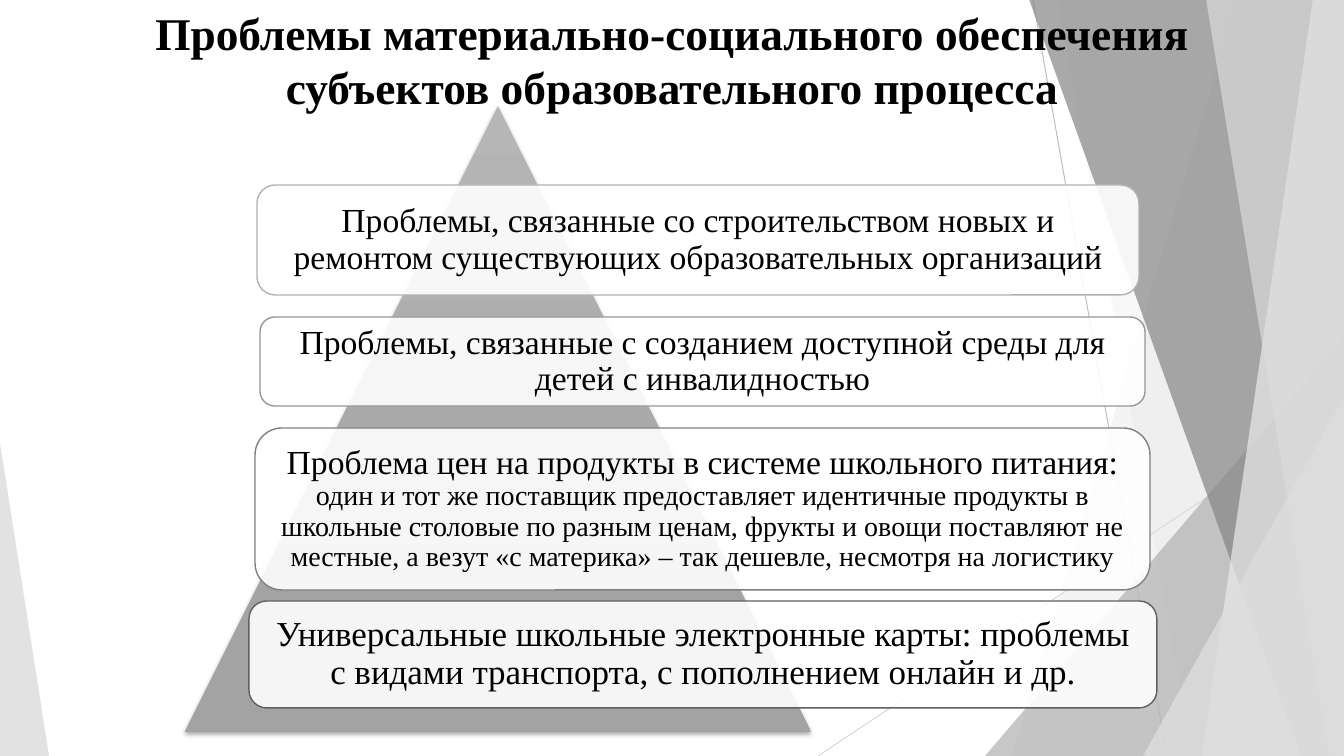
from dataclasses import dataclass

from lxml import etree
from pptx import Presentation
from pptx import util as u
from pptx.dml.color import RGBColor
from pptx.enum import shapes, text
from pptx.oxml.ns import qn

PX = 914400 / 100.8
W, H = 1344, 756


@dataclass(frozen=True)
class Theme:
    font: str = "Times New Roman"
    ink: str = "000000"
    card: str = "FFFFFF"
    pale: str = "DDDDDD"
    light: str = "EBEBEB"
    mid: str = "B2B2B2"
    dark: str = "858585"
    pyramid: tuple = ("B6B6B6", "A3A3A3")
    title: float = 32.4
    body: int = 24
    detail: int = 20
    large: int = 25


T = Theme()

# left, top, width, height, outline, runs of (text, size)
CARDS = [
    (257, 185, 882, 110, "B2B2B2",
     [("Проблемы, связанные со строительством новых и ремонтом существующих "
       "образовательных организаций", T.body)]),
    (260, 317, 885, 89, "969696",
     [("Проблемы, связанные с созданием доступной среды для детей с инвалидностью", T.body)]),
    (255, 428, 895, 162, "808080",
     [("Проблема цен на продукты в системе школьного питания: ", T.body),
      ("один и тот же поставщик предоставляет идентичные продукты в школьные столовые "
       "по разным ценам, фрукты и овощи поставляют не местные, а везут «с материка» – "
       "так дешевле, несмотря на логистику", T.detail)]),
    (249, 601, 908, 107, "5F5F5F",
     [("Универсальные школьные электронные карты: проблемы с видами транспорта, "
       "с пополнением онлайн и др.", T.large)]),
]


def px(*values):
    return [u.Emu(round(v * PX)) for v in values]


def rgb(color):
    return RGBColor.from_string(color)


def paint(sp, color, alpha):
    """Fill without outline or shadow; alpha is the opacity in percent."""
    sp.shadow.inherit = False
    sp.line.fill.background()
    sp.fill.solid()
    sp.fill.fore_color.rgb = rgb(color)
    clr = sp._element.spPr.find(qn("a:solidFill"))[0]
    etree.SubElement(clr, qn("a:alpha"), val=str(alpha * 1000))


def add_line(s, x1, y1, x2, y2, color):
    ln = s.shapes.add_connector(shapes.MSO_CONNECTOR.STRAIGHT, *px(x1, y1, x2, y2))
    ln.line.color.rgb = rgb(color)
    ln.line.width = u.Pt(0.75)
    etree.SubElement(ln._element.spPr, qn("a:effectLst"))


def add_band(s, top_x, bottom_x, color, alpha):
    """Full-height band from a slanted left edge to the right slide edge."""
    builder = s.shapes.build_freeform(top_x, -1, scale=PX)
    builder.add_line_segments([(W, -1), (W, H), (bottom_x, H)], close=True)
    paint(builder.convert_to_shape(), color, alpha)


def add_triangle(s, x, y, w, h, apex=0.5):
    sp = s.shapes.add_shape(shapes.MSO_SHAPE.ISOSCELES_TRIANGLE, *px(x, y, w, h))
    sp.adjustments[0] = apex
    return sp


def add_runs(p, runs, bold=False):
    p.alignment = text.PP_ALIGN.CENTER
    for words, size in runs:
        r = p.add_run()
        r.text = words
        r.font.name = T.font
        r.font.size = u.Pt(size)
        r.font.bold = bold
        r.font.color.rgb = rgb(T.ink)


def add_backdrop(s):
    add_line(s, 1033, 0, 1167, H, "BFBFBF")
    add_line(s, W, 406, 818, H, "D9D9D9")
    add_band(s, 1238, 1012, T.pale, 30)
    add_band(s, 1058, 1192, T.pale, 20)
    paint(add_triangle(s, 985, 336, 359, 420, 1), T.mid, 72)
    add_band(s, 1029, 1301, T.dark, 70)
    add_band(s, 1313, 1202, T.light, 70)
    add_band(s, 1206, 1329, T.pale, 65)
    paint(add_triangle(s, 1143, 396, 201, 360, 1), T.pale, 80)
    paint(add_triangle(s, 0, 443, 49, 313, 0), T.pale, 85)


def add_title(s):
    title = s.shapes.title
    title.left, title.top, title.width, title.height = px(137, 0, 1070, 145)
    tf = title.text_frame
    tf.word_wrap = True
    tf.auto_size = text.MSO_AUTO_SIZE.NONE
    tf.vertical_anchor = text.MSO_ANCHOR.TOP
    add_runs(tf.paragraphs[0],
             [("Проблемы материально-социального обеспечения субъектов "
               "образовательного процесса", T.title)], bold=True)
    s.shapes._spTree.append(title._element)  # in front of the backdrop


def add_pyramid(s):
    sp = add_triangle(s, 185, 106, 626, 626)
    sp.line.fill.background()
    sp.fill.gradient()
    sp.fill.gradient_angle = 270
    for stop, color, position in zip(sp.fill.gradient_stops, T.pyramid, (0, 0.78)):
        stop.color.rgb = rgb(color)
        stop.position = position
    sp.shadow.inherit = False
    shadow = etree.SubElement(sp._element.spPr.find(qn("a:effectLst")), qn("a:outerShdw"),
                              blurRad=str(u.Pt(3)), dist=str(u.Pt(2)),
                              dir="5400000", rotWithShape="0")
    clr = etree.SubElement(shadow, qn("a:srgbClr"), val=T.ink)
    etree.SubElement(clr, qn("a:alpha"), val="35000")


def add_card(s, x, y, w, h, outline, runs):
    sp = s.shapes.add_shape(shapes.MSO_SHAPE.ROUNDED_RECTANGLE, *px(x, y, w, h))
    paint(sp, T.card, 90)
    sp.line.color.rgb = rgb(outline)
    sp.line.width = u.Pt(1)
    tf = sp.text_frame
    tf.word_wrap = True
    tf.vertical_anchor = text.MSO_ANCHOR.MIDDLE
    tf.margin_left, tf.margin_top, tf.margin_right, tf.margin_bottom = px(10, 10, 10, 10)
    p = tf.paragraphs[0]
    p.line_spacing = 0.9
    add_runs(p, runs)


def main():
    prs = Presentation()
    prs.slide_width, prs.slide_height = px(W, H)
    s = prs.slides.add_slide(prs.slide_layouts[5])
    add_backdrop(s)
    add_title(s)
    add_pyramid(s)
    for card in CARDS:
        add_card(s, *card)
    prs.save("out.pptx")


if __name__ == "__main__":
    main()
